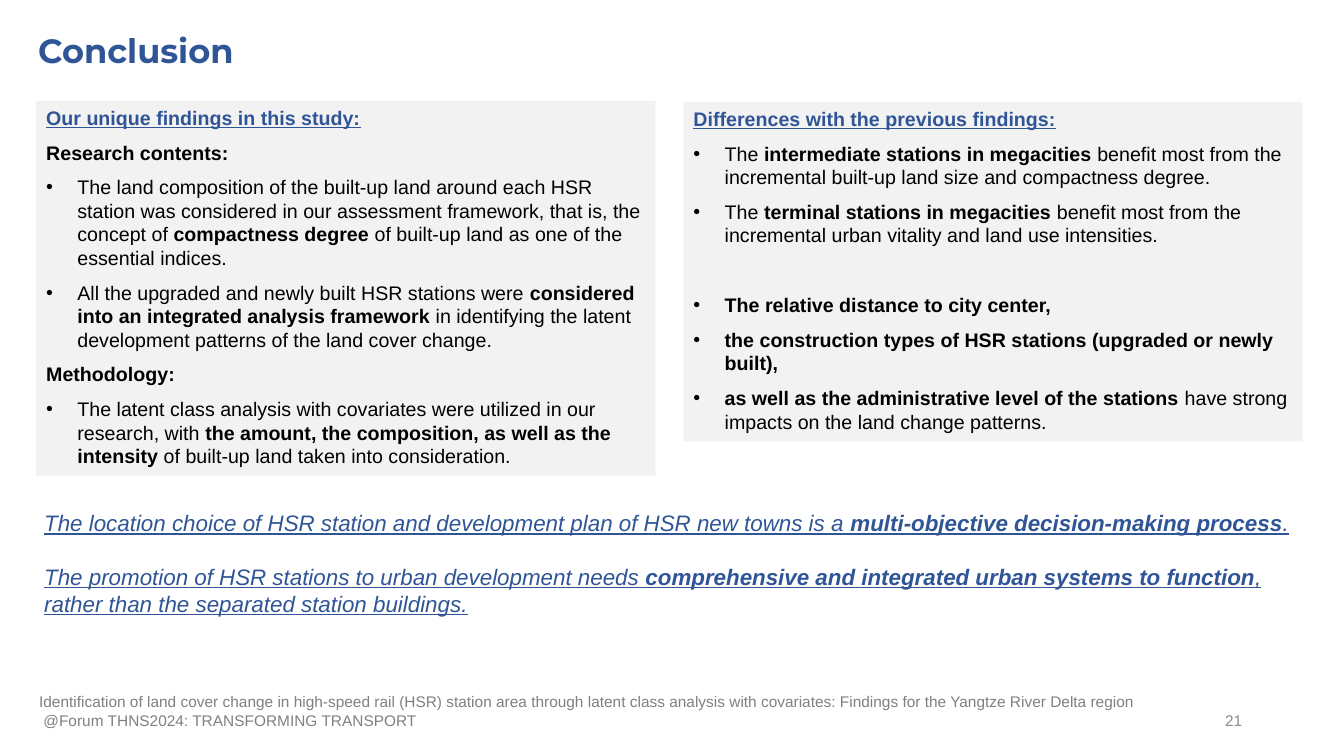
from dataclasses import dataclass, field
from lxml import etree
from pptx import Presentation
from pptx.dml.color import RGBColor
from pptx.enum import shapes, text
from pptx.oxml import ns
from pptx.util import Inches, Pt


@dataclass(frozen=True)
class Theme:
    font: str = "Arial"
    display: str = "Montserrat"
    blue: str = "2F5597"
    black: str = "000000"
    panel: str = "F2F2F2"
    gray: str = "808080"
    pale: str = "8C8C8C"
    title: float = 24
    body: float = 14
    close: float = 16
    small: float = 11


THEME = Theme()


@dataclass(frozen=True)
class Style:
    size: float
    color: str
    font: str = THEME.font
    bold: bool = False
    slant: bool = False
    line: bool = False


HEAD = Style(THEME.body, THEME.blue, bold=True, line=True)
BODY = Style(THEME.body, THEME.black)
CLOSE = Style(THEME.close, THEME.blue, slant=True, line=True)
FOOT = Style(THEME.small, THEME.gray)
PAGE = Style(THEME.small, THEME.pale)
TITLE = Style(THEME.title, THEME.blue, font=THEME.display, bold=True)


@dataclass(frozen=True)
class Para:
    words: str
    style: Style = BODY
    bullet: bool = False
    after: float = 8
    align: text.PP_ALIGN = text.PP_ALIGN.LEFT


@dataclass(frozen=True)
class Block:
    left: float
    top: float
    width: float
    height: float
    paras: list[Para] = field(default_factory=list)
    fill: str | None = None
    wrap: bool = True
    anchor: text.MSO_ANCHOR = text.MSO_ANCHOR.TOP


def point(words: str, after: float = 8) -> Para:
    return Para(words, bullet=True, after=after)


def add_mark(para) -> None:
    props = para._p.get_or_add_pPr()
    props.set("marL", str(Inches(0.31)))
    props.set("indent", str(-Inches(0.31)))
    face = etree.SubElement(props, ns.qn("a:buFont"))
    face.set("typeface", THEME.font)
    mark = etree.SubElement(props, ns.qn("a:buChar"))
    mark.set("char", "•")


def add_runs(para, item: Para) -> None:
    style = item.style
    for count, piece in enumerate(item.words.split("*")):
        if not piece:
            continue
        run = para.add_run()
        run.text = piece
        run.font.name = style.font
        run.font.size = Pt(style.size)
        run.font.bold = style.bold or count % 2 == 1
        run.font.italic = style.slant
        run.font.underline = style.line
        run.font.color.rgb = RGBColor.from_string(style.color)


def draw(slide, block: Block) -> None:
    place = [Inches(n) for n in (block.left, block.top, block.width, block.height)]
    if block.fill:
        shape = slide.shapes.add_shape(shapes.MSO_SHAPE.RECTANGLE, *place)
        shape.shadow.inherit = False
        shape.fill.solid()
        shape.fill.fore_color.rgb = RGBColor.from_string(block.fill)
        shape.line.fill.background()
    else:
        shape = slide.shapes.add_textbox(*place)
    frame = shape.text_frame
    frame.word_wrap = block.wrap
    frame.vertical_anchor = block.anchor
    for count, item in enumerate(block.paras):
        para = frame.add_paragraph() if count else frame.paragraphs[0]
        if item.bullet:
            add_mark(para)
        para.alignment = item.align
        para.space_after = Pt(item.after)
        add_runs(para, item)


FINDS = [
    Para("Our unique findings in this study:", HEAD),
    Para("*Research contents:*"),
    point("The land composition of the built-up land around each HSR station was considered "
          "in our assessment framework, that is, the concept of *compactness degree* of "
          "built-up land as one of the essential indices."),
    point("All the upgraded and newly built HSR stations were *considered into an integrated "
          "analysis framework* in identifying the latent development patterns of the land "
          "cover change."),
    Para("*Methodology:*"),
    point("The latent class analysis with covariates were utilized in our research, with "
          "*the amount, the composition, as well as the intensity* of built-up land taken "
          "into consideration."),
]
DIFFS = [
    Para("Differences with the previous findings:", HEAD),
    point("The *intermediate stations in megacities* benefit most from the incremental "
          "built-up land size and compactness degree."),
    point("The *terminal stations in megacities* benefit most from the incremental urban "
          "vitality and land use intensities.", after=33),
    point("*The relative distance to city center,*"),
    point("*the construction types of HSR stations (upgraded or newly built),*"),
    point("*as well as the administrative level of the stations *have strong impacts on "
          "the land change patterns."),
]
ENDS = [
    Para("The location choice of HSR station and development plan of HSR new towns is a "
         "*multi-objective decision-making process*.", CLOSE, after=19.3),
    Para("The promotion of HSR stations to urban development needs *comprehensive and "
         "integrated urban systems to function*, rather than the separated station "
         "buildings.", CLOSE, after=0),
]
NOTES = [
    Para("Identification of land cover change in high-speed rail (HSR) station area through "
         "latent class analysis with covariates: Findings for the Yangtze River Delta region",
         FOOT, after=0),
    Para(" @Forum THNS2024: TRANSFORMING TRANSPORT", FOOT, after=0),
]
BLOCKS = [
    Block(0.29, 6.82, 11.43, 0.47, NOTES),
    Block(9.42, 6.95, 3, 0.4,
          [Para("21", PAGE, after=0, align=text.PP_ALIGN.RIGHT)],
          anchor=text.MSO_ANCHOR.MIDDLE),
    Block(0.28, 0.25, 2.23, 0.5, [Para("Conclusion", TITLE, after=0)], wrap=False),
    Block(6.78, 1.01, 6.14, 3.37, DIFFS, THEME.panel),
    Block(0.36, 1, 6.14, 3.72, FINDS, THEME.panel),
    Block(0.34, 5, 12.64, 1.18, ENDS),
]


def main() -> None:
    deck = Presentation()
    deck.slide_width = Inches(13.33)
    deck.slide_height = Inches(7.5)
    slide = deck.slides.add_slide(deck.slide_layouts[6])
    for block in BLOCKS:
        draw(slide, block)
    deck.save("out.pptx")


if __name__ == "__main__":
    main()
